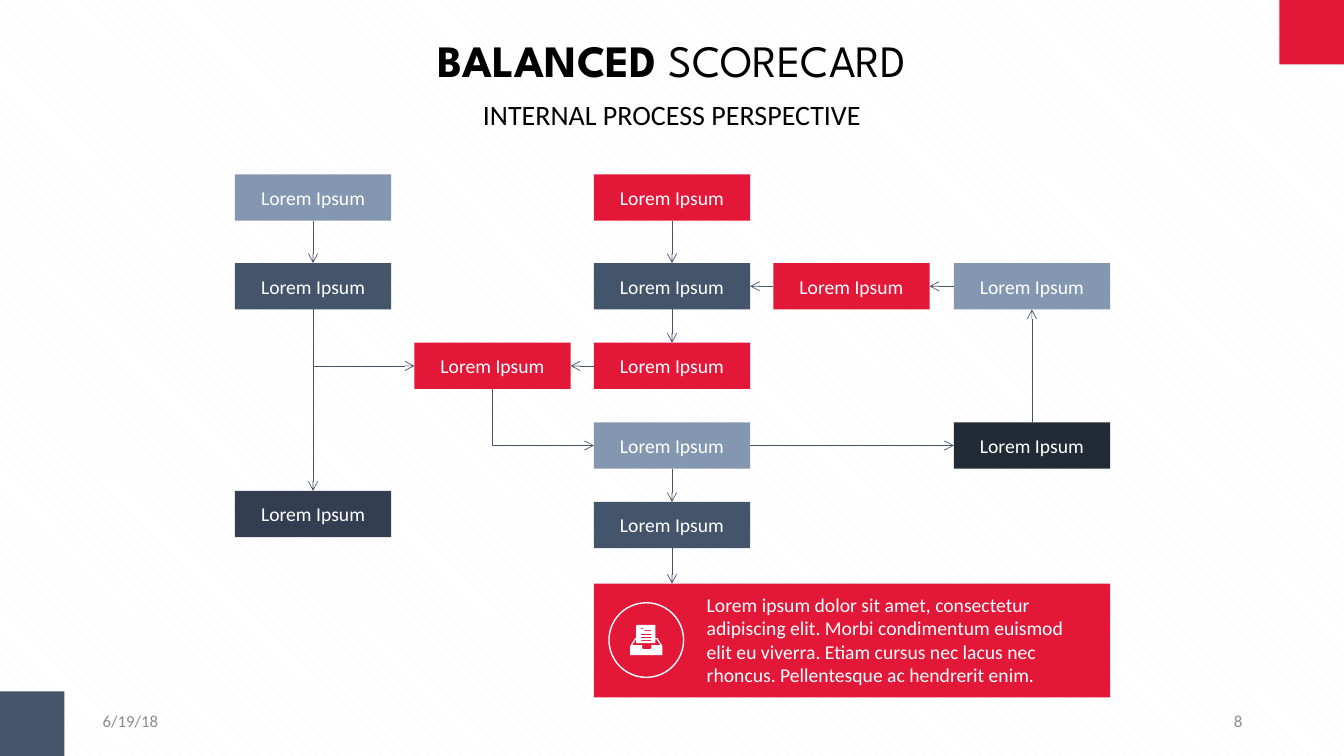
"""Build the internal process perspective slide of a balanced scorecard."""
from dataclasses import dataclass
from typing import Any

import pptx
import pptx.dml.color
import pptx.enum.dml
import pptx.enum.shapes
import pptx.enum.text
import pptx.oxml
import pptx.oxml.ns
import pptx.util
from lxml import etree

PX = 9144
RED, SLATE, STEEL, NAVY, INK = "E31737", "44546A", "8497B0", "333F50", "222A35"
WHITE, BLACK, GREY = "FFFFFF", "000000", "8C8C8C"
BODY_FONT, TITLE_FONT = "Calibri", "League Spartan"
TOP, LEFT, BOTTOM, RIGHT = range(4)
BOX_WIDTH, BOX_HEIGHT = 155, 46
ALIGN = pptx.enum.text.PP_ALIGN
ANCHOR = pptx.enum.text.MSO_ANCHOR
SHAPE = pptx.enum.shapes.MSO_SHAPE
CONNECTOR = pptx.enum.shapes.MSO_CONNECTOR


@dataclass(frozen=True)
class Step:
    """A labelled process box in a column of the chart."""
    name: str
    column: int
    top: int
    color: str


@dataclass(frozen=True)
class Link:
    """An arrow from one side of a step to a side of another."""
    start: str
    start_side: int
    end: str
    end_side: int
    bent: bool = False


@dataclass(frozen=True)
class Caption:
    """A free text with its place and format."""
    text: str
    place: tuple[int, int, int, int]
    size: int
    color: str
    align: Any
    fitted: bool = False


STEPS = [
    Step("left start", 0, 173, STEEL),
    Step("left middle", 0, 261, SLATE),
    Step("left end", 0, 487, NAVY),
    Step("junction", 1, 340, RED),
    Step("centre 1", 2, 173, RED),
    Step("centre 2", 2, 261, SLATE),
    Step("centre 3", 2, 340, RED),
    Step("centre 4", 2, 419, STEEL),
    Step("centre 5", 2, 498, SLATE),
    Step("feed", 3, 261, RED),
    Step("right top", 4, 261, STEEL),
    Step("right bottom", 4, 419, INK),
]
LINKS = [
    Link("left start", BOTTOM, "left middle", TOP),
    Link("left middle", BOTTOM, "left end", TOP),
    Link("centre 1", BOTTOM, "centre 2", TOP),
    Link("centre 2", BOTTOM, "centre 3", TOP),
    Link("centre 3", LEFT, "junction", RIGHT),
    Link("junction", BOTTOM, "centre 4", LEFT, bent=True),
    Link("centre 4", RIGHT, "right bottom", LEFT),
    Link("right bottom", TOP, "right top", BOTTOM),
    Link("right top", LEFT, "feed", RIGHT),
    Link("feed", LEFT, "centre 2", RIGHT),
    Link("centre 4", BOTTOM, "centre 5", TOP),
]
CAPTIONS = [
    Caption("6/19/18", (92, 695, 300, 40), 12, GREY, ALIGN.LEFT),
    Caption("8", (942, 695, 300, 40), 12, GREY, ALIGN.RIGHT),
    Caption("INTERNAL PROCESS PERSPECTIVE", (160, 97, 1013, 34), 20, BLACK, ALIGN.CENTER, True),
    Caption(
        "Lorem ipsum dolor sit amet, consectetur adipiscing elit. Morbi condimentum euismod "
        "elit eu viverra. Etiam cursus nec lacus nec rhoncus. Pellentesque ac hendrerit enim.",
        (701, 588, 383, 94), 14, WHITE, ALIGN.LEFT, True),
]
TRAY_OUTLINE = [
    (625, 641), (630, 633), (631, 633), (631, 621), (632, 620), (650, 620),
    (650, 633), (652, 633), (657, 641), (657, 650), (625, 650),
]
TRAY_OPENING = [
    (647, 640), (646, 640), (646, 643), (645, 644), (638, 644), (637, 643), (637, 640),
    (627, 640), (631, 634), (631, 638), (650, 638), (650, 634), (651, 634), (655, 640),
]
PAPER_RULES = [(636, 638, 623), (639, 646, 625), (636, 646, 629), (636, 646, 632), (636, 646, 635)]


def rgb(color: str) -> pptx.dml.color.RGBColor:
    """Turn a hex string into a colour."""
    return pptx.dml.color.RGBColor.from_string(color)


def scaled(place: tuple[int, int, int, int]) -> list[int]:
    """Turn px lengths into EMU."""
    return [length * PX for length in place]


def format_text(frame: Any, size: int, color: str, align: Any, font: str = BODY_FONT) -> None:
    """Format every run of a text frame."""
    frame.word_wrap = True
    for para in frame.paragraphs:
        para.alignment = align
        for span in para.runs:
            span.font.name = font
            span.font.size = pptx.util.Pt(size)
            span.font.color.rgb = rgb(color)


def fit_text(frame: Any) -> None:
    """Drop the insets and let the box follow its text."""
    frame.margin_left = frame.margin_top = frame.margin_right = frame.margin_bottom = 0
    frame.auto_size = pptx.enum.text.MSO_AUTO_SIZE.SHAPE_TO_FIT_TEXT


def paint(shape: Any, color: str) -> None:
    """Give a shape a plain fill without line or shadow."""
    shape.shadow.inherit = False
    shape.fill.solid()
    shape.fill.fore_color.rgb = rgb(color)
    shape.line.fill.background()


def draw_block(page: Any, place: tuple[int, int, int, int], color: str) -> Any:
    """Draw a plain rectangle."""
    block = page.shapes.add_shape(SHAPE.RECTANGLE, *scaled(place))
    paint(block, color)
    return block


def draw_step(page: Any, step: Step) -> Any:
    """Draw a labelled process box."""
    left = 233 + 713 * step.column // 4
    box = draw_block(page, (left, step.top, BOX_WIDTH, BOX_HEIGHT), step.color)
    box.text_frame.text = "Lorem Ipsum"
    box.text_frame.vertical_anchor = ANCHOR.MIDDLE
    format_text(box.text_frame, 14, WHITE, ALIGN.CENTER)
    return box


def draw_caption(page: Any, caption: Caption) -> None:
    """Draw a free text."""
    frame = page.shapes.add_textbox(*scaled(caption.place)).text_frame
    frame.text = caption.text
    format_text(frame, caption.size, caption.color, caption.align)
    if caption.fitted:
        fit_text(frame)
    else:
        frame.vertical_anchor = ANCHOR.MIDDLE


def side_point(box: Any, side: int) -> tuple[int, int]:
    """Find the middle of a side of a box."""
    across = {LEFT: 0, RIGHT: box.width}.get(side, box.width // 2)
    down = {TOP: 0, BOTTOM: box.height}.get(side, box.height // 2)
    return box.left + across, box.top + down


def draw_arrow(page: Any, start: tuple[int, int], end: tuple[int, int], kind: Any = CONNECTOR.STRAIGHT) -> Any:
    """Draw a thin line with an open arrowhead at its end."""
    arrow = page.shapes.add_connector(kind, *start, *end)
    arrow.line.color.rgb = rgb(SLATE)
    arrow.line.width = pptx.util.Pt(0.5)
    properties = arrow.element.spPr
    outline = properties.find(pptx.oxml.ns.qn("a:ln"))
    etree.SubElement(outline, pptx.oxml.ns.qn("a:tailEnd"), type="arrow")
    etree.SubElement(properties, pptx.oxml.ns.qn("a:effectLst"))
    return arrow


def bend_down_then_right(arrow: Any, start: tuple[int, int], end: tuple[int, int]) -> None:
    """Turn an elbow into one corner below its start."""
    across, down = end[0] - start[0], end[1] - start[1]
    arrow.left, arrow.top = start[0] + (across - down) // 2, start[1] + (down - across) // 2
    arrow.width, arrow.height = down, across
    properties = arrow.element.spPr
    transform = properties.find(pptx.oxml.ns.qn("a:xfrm"))
    transform.set("rot", "16200000")
    transform.set("flipH", "1")
    properties.find(pptx.oxml.ns.qn("a:prstGeom")).set("prst", "bentConnector2")


def draw_link(page: Any, link: Link, boxes: dict[str, Any]) -> None:
    """Join two process boxes with an arrow."""
    start = side_point(boxes[link.start], link.start_side)
    end = side_point(boxes[link.end], link.end_side)
    arrow = draw_arrow(page, start, end, CONNECTOR.ELBOW if link.bent else CONNECTOR.STRAIGHT)
    arrow.begin_connect(boxes[link.start], link.start_side)
    arrow.end_connect(boxes[link.end], link.end_side)
    if link.bent:
        bend_down_then_right(arrow, start, end)


def draw_icon(page: Any) -> None:
    """Draw the document tray inside its ring."""
    rules = [[(x0, y), (x1, y), (x1, y + 1), (x0, y + 1)] for x0, x1, y in PAPER_RULES]
    builder = page.shapes.build_freeform(*TRAY_OUTLINE[0], scale=PX)
    builder.add_line_segments(TRAY_OUTLINE[1:], close=True)
    for hole in [TRAY_OPENING, *rules]:
        builder.move_to(*hole[0])
        builder.add_line_segments(hole[1:], close=True)
    paint(builder.convert_to_shape(), WHITE)
    ring = page.shapes.add_shape(SHAPE.OVAL, *scaled((604, 598, 74, 74)))
    ring.shadow.inherit = False
    ring.fill.background()
    ring.line.color.rgb = rgb(WHITE)
    ring.line.width = pptx.util.Pt(1)


def draw_title(page: Any) -> None:
    """Place and format the slide title."""
    title = page.shapes.title
    title.left, title.top, title.width, title.height = scaled((160, 32, 1013, 54))
    frame = title.text_frame
    frame.text = "BALANCED "
    frame.paragraphs[0].add_run().text = "SCORECARD"
    frame.vertical_anchor = ANCHOR.MIDDLE
    format_text(frame, 32, BLACK, ALIGN.CENTER, TITLE_FONT)
    for span, bold in zip(frame.paragraphs[0].runs, (True, False)):
        span.font.bold = bold
    fit_text(frame)


def main() -> None:
    """Build and save the deck."""
    deck = pptx.Presentation()
    deck.slide_width, deck.slide_height = 1333 * PX, 750 * PX
    page = deck.slides.add_slide(deck.slide_layouts[5])
    backdrop = page.background.fill
    backdrop.patterned()
    backdrop.pattern = pptx.enum.dml.MSO_PATTERN.SHINGLE
    backdrop.fore_color.rgb = rgb("F2F2F2")
    backdrop.back_color.rgb = rgb(WHITE)
    draw_title(page)
    draw_block(page, (1269, 0, 64, 64), RED)
    draw_block(page, (0, 686, 64, 64), SLATE)
    panel = draw_block(page, (589, 579, 512, 113), RED)
    boxes = {step.name: draw_step(page, step) for step in STEPS}
    for link in LINKS:
        draw_link(page, link, boxes)
    fork = side_point(boxes["junction"], LEFT)
    branch = draw_arrow(page, (side_point(boxes["left middle"], BOTTOM)[0], fork[1]), fork)
    branch.end_connect(boxes["junction"], LEFT)
    last = side_point(boxes["centre 5"], BOTTOM)
    draw_arrow(page, last, (last[0], panel.top)).begin_connect(boxes["centre 5"], BOTTOM)
    for caption in CAPTIONS:
        draw_caption(page, caption)
    draw_icon(page)
    deck.save("out.pptx")


if __name__ == "__main__":
    main()
